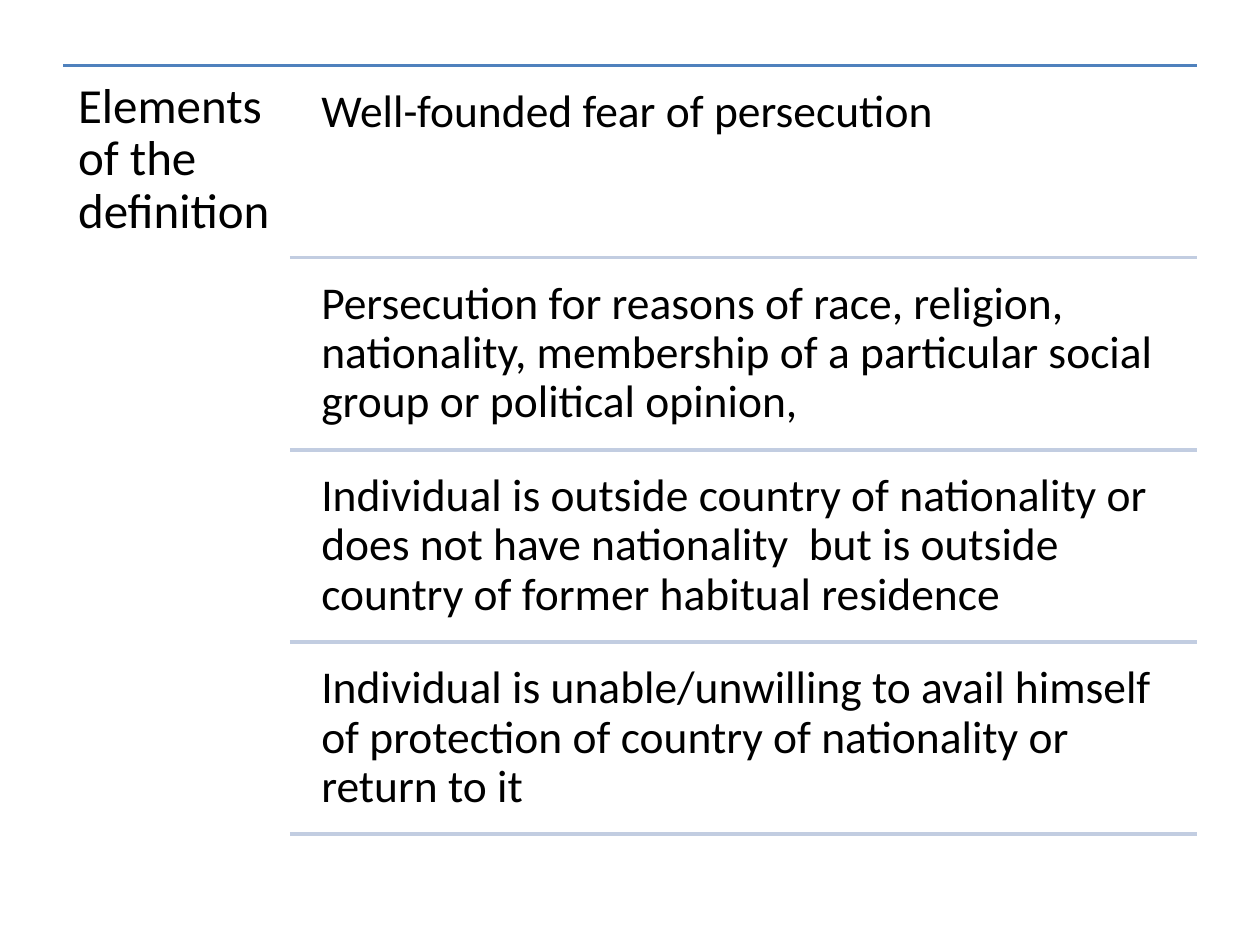
"""Build a slide listing the elements of the definition between ruled lines."""
from dataclasses import dataclass

from lxml import etree
from pptx import Presentation
from pptx.dml.color import RGBColor
from pptx.enum.shapes import MSO_CONNECTOR
from pptx.enum.text import MSO_ANCHOR, MSO_AUTO_SIZE, PP_ALIGN
from pptx.oxml.ns import qn
from pptx.util import Inches, Pt

STRAIGHT = MSO_CONNECTOR.STRAIGHT
TOP = MSO_ANCHOR.TOP
LEFT = PP_ALIGN.LEFT
NO_FIT = MSO_AUTO_SIZE.NONE
TITLE_ONLY = 5

FONT = "Calibri"
TEXT_COLOUR = "000000"
TOP_RULE_COLOUR = "4F81BD"
ROW_RULE_COLOUR = "C2CDE1"

LEFT_EDGE, RIGHT_EDGE = 0.5, 9.5
TOP_EDGE, LAST_RULE = 0.52, 6.62
ROW_RULE_LEFT = 2.3
ROW_TEXT_LEFT, ROW_TEXT_WIDTH, ROW_TEXT_HEIGHT = 2.44, 7.07, 1.45
ROW_GAP = 0.07

HEADING = "Elements of the definition"
ELEMENTS = [
    "Well-founded fear of persecution",
    "Persecution for reasons of race, religion, nationality, "
    "membership of a particular social group or political opinion,",
    "Individual is outside country of nationality or does not have "
    "nationality  but is outside country of former habitual residence",
    "Individual is unable/unwilling to avail himself of protection "
    "of country of nationality or return to it",
]


@dataclass
class Label:
    """Text with its place, size and inset."""

    text: str
    left: float
    top: float
    width: float
    height: float
    size: float
    inset: float


def colour(value: str) -> RGBColor:
    """Turn a hex string into a colour."""
    return RGBColor.from_string(value)


def fill_label(box, label: Label) -> None:
    """Place a text shape and write its label."""
    box.left, box.top = Inches(label.left), Inches(label.top)
    box.width, box.height = Inches(label.width), Inches(label.height)
    frame = box.text_frame
    frame.word_wrap = True
    frame.auto_size = NO_FIT
    frame.vertical_anchor = TOP
    frame.margin_left = frame.margin_right = Inches(label.inset)
    frame.margin_top = frame.margin_bottom = Inches(label.inset)
    para = frame.paragraphs[0]
    para.alignment = LEFT
    para.line_spacing = 0.9
    span = para.add_run()
    span.text = label.text
    span.font.name = FONT
    span.font.size = Pt(label.size)
    span.font.color.rgb = colour(TEXT_COLOUR)


def add_rule(page, left: float, top: float, line_colour: str) -> None:
    """Draw a horizontal line to the right edge."""
    rule = page.shapes.add_connector(
        STRAIGHT, Inches(left), Inches(top), Inches(RIGHT_EDGE), Inches(top)
    )
    rule.line.color.rgb = colour(line_colour)
    rule.line.width = Pt(2)
    etree.SubElement(rule._element.spPr, qn("a:effectLst"))


def main() -> None:
    """Build and save the deck."""
    deck = Presentation()
    deck.slide_width, deck.slide_height = Inches(10), Inches(7.5)
    page = deck.slides.add_slide(deck.slide_layouts[TITLE_ONLY])

    add_rule(page, LEFT_EDGE, TOP_EDGE, TOP_RULE_COLOUR)
    heading = Label(HEADING, LEFT_EDGE, TOP_EDGE,
                    ROW_RULE_LEFT - LEFT_EDGE, 6.18, 28, 0.12)
    fill_label(page.shapes.title, heading)

    pitch = (LAST_RULE - TOP_EDGE) / len(ELEMENTS)
    for index, text in enumerate(ELEMENTS):
        row_top = TOP_EDGE + index * pitch
        label = Label(text, ROW_TEXT_LEFT, row_top + ROW_GAP,
                      ROW_TEXT_WIDTH, ROW_TEXT_HEIGHT, 26, 0.11)
        fill_label(page.shapes.add_textbox(0, 0, 0, 0), label)
        add_rule(page, ROW_RULE_LEFT, row_top + pitch, ROW_RULE_COLOUR)

    deck.save("out.pptx")


if __name__ == "__main__":
    main()
